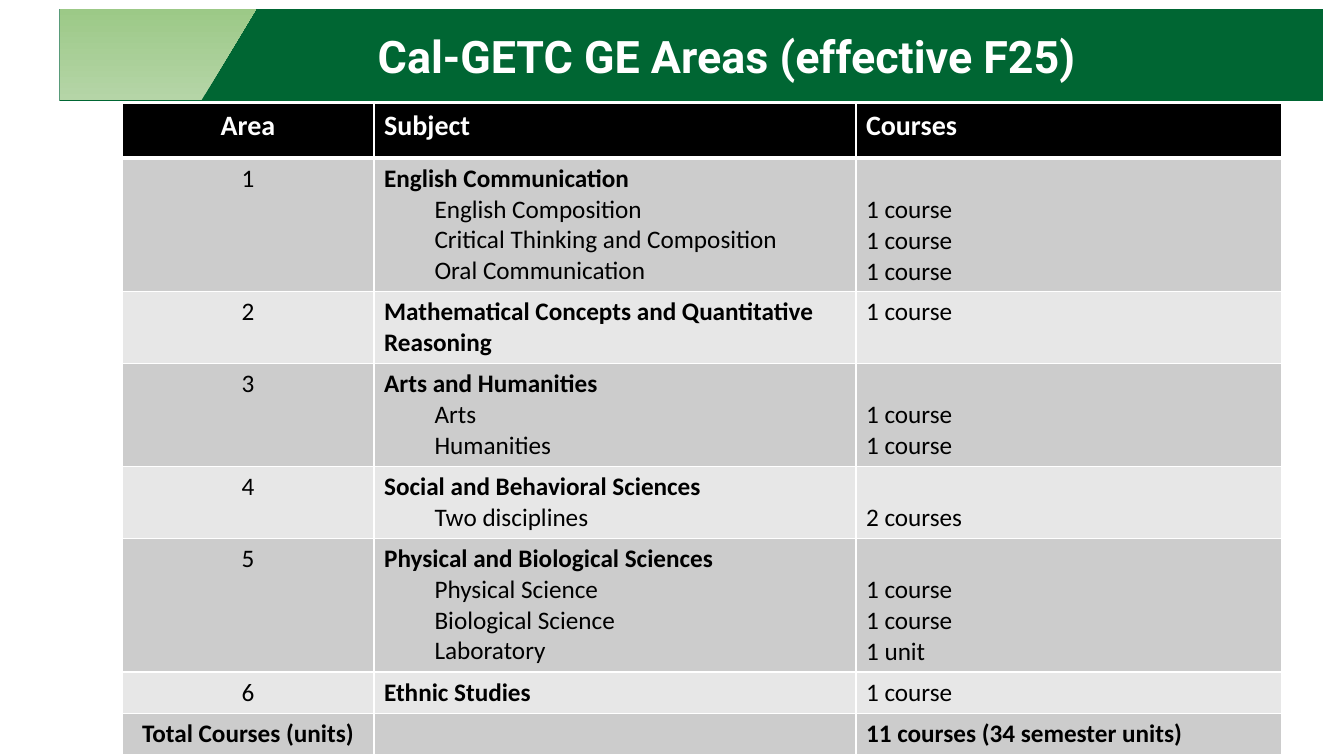
from lxml import etree
from pptx import Presentation
from pptx.dml.color import RGBColor
from pptx.enum import shapes, text
from pptx.oxml import ns
from pptx.util import Inches, Pt

COLORS = {
    "band": "006633", "white": "FFFFFF", "black": "000000",
    "odd": "CCCCCC", "even": "E7E7E7",
    "accent_bottom": "B5D5A7", "accent_top": "9CC987",
}
AREAS = [
    ("1", ["English Communication", "English Composition",
           "Critical Thinking and Composition", "Oral Communication"],
     ["1 course", "1 course", "1 course"], 4),
    ("2", ["Mathematical Concepts and Quantitative Reasoning"], ["1 course"], 2),
    ("3", ["Arts and Humanities", "Arts", "Humanities"], ["1 course", "1 course"], 3),
    ("4", ["Social and Behavioral Sciences", "Two disciplines"], ["2 courses"], 2),
    ("5", ["Physical and Biological Sciences", "Physical Science",
           "Biological Science", "Laboratory"],
     ["1 course", "1 course", "1 unit"], 4),
    ("6", ["Ethnic Studies"], ["1 course"], 1),
    ("Total Courses (units)", [], ["11 courses (34 semester units)"], 1),
]


def format_font(font, color, **values):
    font.color.rgb = RGBColor.from_string(COLORS[color])
    for name, value in values.items():
        setattr(font, name, value)


def add_borders(cell, top, bottom):
    properties = cell._tc.get_or_add_tcPr()
    for side, width in (("L", 1), ("R", 1), ("T", top), ("B", bottom)):
        line = etree.SubElement(properties, ns.qn(f"a:ln{side}"), w=str(Pt(width)))
        fill = etree.SubElement(line, ns.qn("a:solidFill"))
        etree.SubElement(fill, ns.qn("a:srgbClr"), val=COLORS["white"])


presentation = Presentation()
presentation.slide_width = Inches(13.33)
presentation.slide_height = Inches(7.5)
slide = presentation.slides.add_slide(presentation.slide_layouts[5])

band = slide.shapes.add_shape(
    shapes.MSO_SHAPE.RECTANGLE, Inches(0.59), Inches(0.09), Inches(12.53), Inches(0.91))
band.shadow.inherit = False
band.fill.solid()
band.fill.fore_color.rgb = RGBColor.from_string(COLORS["band"])
band.line.fill.background()
slide.shapes._spTree.insert(2, band._element)

title = slide.shapes.title
title.left, title.top = Inches(1.46), Inches(0.3)
title.width, title.height = Inches(11.5), Inches(0.58)
title.text_frame.text = "Cal-GETC GE Areas (effective F25)"
title.text_frame.vertical_anchor = text.MSO_ANCHOR.MIDDLE
heading = title.text_frame.paragraphs[0]
heading.alignment = text.PP_ALIGN.CENTER
heading.line_spacing = 0.9
format_font(heading.runs[0].font, "white", name="Roboto", size=Pt(32), bold=True)

table = slide.shapes.add_table(
    len(AREAS) + 1, 3, Inches(1.21), Inches(1.03), Inches(11.5), Inches(6.35)).table
for column, width in zip(table.columns, (2.5, 4.78, 4.22)):
    column.width = Inches(width)

rows = [("Area", ["Subject"], ["Courses"], 1)] + AREAS
for row_index, (area, subjects, courses, line_count) in enumerate(rows):
    is_header = row_index == 0
    is_total = row_index == len(AREAS)
    row_height = 0.54 if is_header else 0.41 + 0.3 * (line_count - 1)
    table.rows[row_index].height = Inches(row_height)
    fill_name = "black" if is_header else "odd" if row_index % 2 else "even"

    for column_index, lines in enumerate(([area], subjects, courses)):
        cell = table.cell(row_index, column_index)
        add_borders(cell, 3 if row_index == 1 else 1, 3 if is_header else 1)
        cell.fill.solid()
        cell.fill.fore_color.rgb = RGBColor.from_string(COLORS[fill_name])
        if column_index == 2 and len(subjects) > 1:
            cell.margin_top = Inches(0.36)
        cell.text_frame.text = "\n".join(lines)
        for line_index, paragraph in enumerate(cell.text_frame.paragraphs):
            is_subject = column_index == 1 and line_index == 0
            if column_index == 0:
                paragraph.alignment = text.PP_ALIGN.CENTER
            if column_index == 1 and line_index > 0:
                paragraph.level = 1
                paragraph._p.get_or_add_pPr().set("marL", str(Inches(0.5)))
            for run in paragraph.runs:
                format_font(run.font, "white" if is_header else "black",
                            name="Calibri", size=Pt(20 if is_header else 18),
                            bold=is_header or is_total or is_subject)

builder = slide.shapes.build_freeform(Inches(0.59), Inches(0.99))
builder.add_line_segments(
    [(Inches(x), Inches(y)) for x, y in ((2, 0.99), (2.54, 0.09), (0.59, 0.09))])
accent = builder.convert_to_shape()
accent.shadow.inherit = False
accent.line.fill.background()
accent.fill.gradient()
accent.fill.gradient_angle = 90
for stop, name in zip(accent.fill.gradient_stops, ("accent_bottom", "accent_top")):
    stop.color.rgb = RGBColor.from_string(COLORS[name])

presentation.save("out.pptx")
